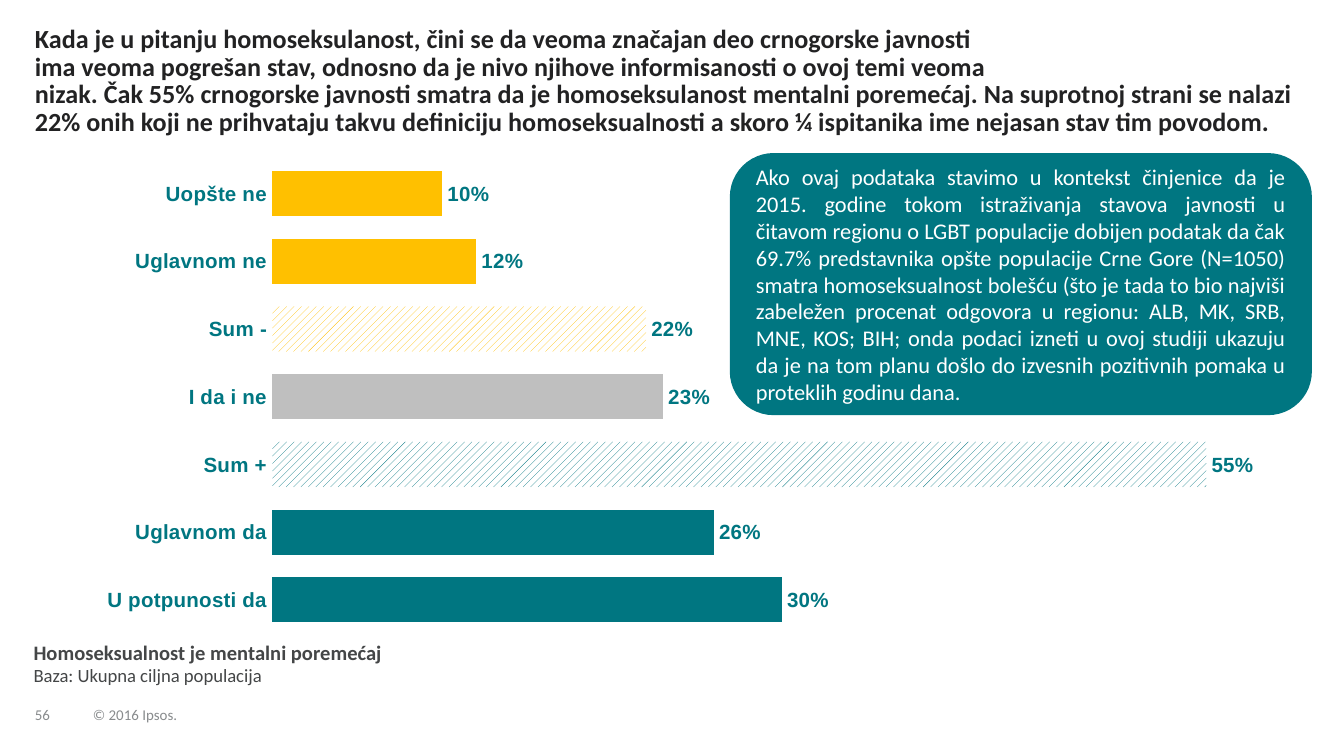
"""Build a survey slide with a bar chart and a commentary callout."""
from dataclasses import dataclass

from pptx import Presentation
from pptx import oxml
from pptx import util as u
from pptx.chart import data as chart_data
from pptx.dml import color
from pptx.enum import chart as charts, dml, shapes, text
from pptx.oxml import ns


@dataclass(frozen=True)
class Theme:
    """Colours, fonts and type sizes of the slide."""
    teal: str = "007681"
    amber: str = "FFC000"
    grey: str = "BFBFBF"
    white: str = "FFFFFF"
    heading: str = "222223"
    caption: str = "444647"
    footer: str = "888B8D"
    body_font: str = "Calibri"
    chart_font: str = "Arial"
    title_size: float = 14
    callout_size: float = 12
    label_size: float = 11
    base_size: float = 10
    footer_size: float = 8


THEME = Theme()
MARGIN = 18.72
CONTENT_WIDTH = 684

TITLE = (
    "Kada je u pitanju homoseksulanost, čini se da veoma značajan deo crnogorske javnosti "
    "ima veoma pogrešan stav, odnosno da je nivo njihove informisanosti o ovoj temi veoma"
)
TITLE_REST = (
    "nizak. Čak 55% crnogorske javnosti smatra da je homoseksulanost mentalni poremećaj. "
    "Na suprotnoj strani se nalazi 22% onih koji ne prihvataju takvu definiciju "
    "homoseksualnosti a skoro ¼ ispitanika ime nejasan stav tim povodom."
)
CALLOUT = (
    "Ako ovaj podataka stavimo u kontekst činjenice da je 2015. godine tokom istraživanja "
    "stavova javnosti u čitavom regionu o LGBT populacije dobijen podatak da čak 69.7% "
    "predstavnika opšte populacije Crne Gore (N=1050) smatra homoseksualnost bolešću "
    "(što je tada to bio najviši zabeležen procenat odgovora u regionu: ALB, MK, SRB, MNE, "
    "KOS; BIH; onda podaci izneti u ovoj studiji ukazuju da je na tom planu došlo do "
    "izvesnih pozitivnih pomaka u proteklih godinu dana."
)
ANSWERS = [
    ("Uopšte ne", 10, THEME.amber, False),
    ("Uglavnom ne", 12, THEME.amber, False),
    ("Sum -", 22, THEME.amber, True),
    ("I da i ne", 23, THEME.grey, False),
    ("Sum +", 55, THEME.teal, True),
    ("Uglavnom da", 26, THEME.teal, False),
    ("U potpunosti da", 30, THEME.teal, False),
]


def rgb(value):
    """Return a colour from its hex string."""
    return color.RGBColor.from_string(value)


def points(box):
    """Convert a box of left, top, width, height to points."""
    return [u.Pt(length) for length in box]


def apply(target, **values):
    """Set attributes from a dict of format values."""
    for name, value in values.items():
        setattr(target, name, value)


def set_font(font, size, ink, bold=False, name=THEME.body_font):
    """Format one font."""
    apply(font, name=name, size=u.Pt(size), bold=bold)
    font.color.rgb = rgb(ink)


def add_text(slide, box, runs, spacing, wrap=True, anchor=text.MSO_ANCHOR.TOP):
    """Place a text box whose runs stand on separate lines."""
    frame = slide.shapes.add_textbox(*points(box)).text_frame
    apply(frame, margin_left=0, margin_top=0, margin_right=0, margin_bottom=0,
          word_wrap=wrap, vertical_anchor=anchor)
    paragraph = frame.paragraphs[0]
    paragraph.line_spacing = spacing
    for index, (words, size, ink, bold) in enumerate(runs):
        if index:
            paragraph.add_line_break()
        run = paragraph.add_run()
        run.text = words
        set_font(run.font, size, ink, bold)


def add_heading(slide, box, words):
    """Place one part of the heading."""
    add_text(slide, box, [(words, THEME.title_size, THEME.heading, True)], 0.9)


def add_caption(slide, box):
    """Place the question and its base below the chart."""
    add_text(slide, box, [
        ("Homoseksualnost je mentalni poremećaj", THEME.label_size, THEME.caption, True),
        ("Baza: Ukupna ciljna populacija", THEME.base_size, THEME.caption, False),
    ], 0.95)


def add_footer(slide, box):
    """Place the page number and the copyright line."""
    left, top, width, height = box
    for words, offset in (("56", 0), ("© 2016 Ipsos.", 31)):
        add_text(slide, (left + offset, top, width - offset, height),
                 [(words, THEME.footer_size, THEME.footer, False)], 0.85,
                 wrap=False, anchor=text.MSO_ANCHOR.BOTTOM)


def set_plot_layout(chart, x, y, width, height):
    """Fix the inner plot area as fractions of the chart."""
    plot_area = chart.plots[0]._element.getparent()
    for layout in plot_area.findall(ns.qn("c:layout")):
        plot_area.remove(layout)
    values = "".join(f'<c:{tag} val="{value}"/>' for tag, value in (
        ("layoutTarget", "inner"), ("xMode", "edge"), ("yMode", "edge"),
        ("x", x), ("y", y), ("w", width), ("h", height)))
    plot_area.insert(0, oxml.parse_xml(
        f'<c:layout {ns.nsdecls("c")}><c:manualLayout>{values}</c:manualLayout></c:layout>'))


def add_answer_chart(slide, box):
    """Place the bar chart of answers."""
    data = chart_data.CategoryChartData(number_format='0"%"')
    data.categories = [answer[0] for answer in ANSWERS]
    data.add_series("Series 1", [answer[1] for answer in ANSWERS])
    chart = slide.shapes.add_chart(
        charts.XL_CHART_TYPE.BAR_CLUSTERED, *points(box), data).chart
    apply(chart, has_legend=False, has_title=False)
    label_format = dict(size=THEME.label_size, ink=THEME.teal, bold=True,
                        name=THEME.chart_font)
    set_font(chart.font, **label_format)
    apply(chart.value_axis, visible=False, has_major_gridlines=False,
          minimum_scale=0, maximum_scale=60)
    axis = chart.category_axis
    apply(axis, reverse_order=True, major_tick_mark=charts.XL_TICK_MARK.NONE)
    axis.format.line.fill.background()
    set_font(axis.tick_labels.font, **label_format)
    plot = chart.plots[0]
    apply(plot, gap_width=50, vary_by_categories=False, has_data_labels=True)
    apply(plot.data_labels, show_value=True, number_format='0"%"',
          number_format_is_linked=False, position=charts.XL_LABEL_POSITION.OUTSIDE_END)
    set_font(plot.data_labels.font, **label_format)
    for index, (_, _, ink, hatched) in enumerate(ANSWERS):
        fill = plot.series[0].points[index].format.fill
        if hatched:
            fill.patterned()
            fill.pattern = dml.MSO_PATTERN.WIDE_UPWARD_DIAGONAL
            fill.back_color.rgb = rgb(THEME.white)
        else:
            fill.solid()
        fill.fore_color.rgb = rgb(ink)
    set_plot_layout(chart, 0.186, 0.024, 0.798, 0.956)


def add_callout(slide, box):
    """Place the rounded commentary panel."""
    shape = slide.shapes.add_shape(shapes.MSO_SHAPE.ROUNDED_RECTANGLE, *points(box))
    shape.shadow.inherit = False
    shape.fill.solid()
    shape.fill.fore_color.rgb = rgb(THEME.teal)
    shape.line.fill.background()
    apply(shape.text_frame, word_wrap=True, vertical_anchor=text.MSO_ANCHOR.MIDDLE)
    paragraph = shape.text_frame.paragraphs[0]
    paragraph.alignment = text.PP_ALIGN.JUSTIFY
    run = paragraph.add_run()
    run.text = CALLOUT
    set_font(run.font, THEME.callout_size, THEME.white)


def main():
    """Build and save the slide."""
    presentation = Presentation()
    apply(presentation, slide_width=u.Pt(720), slide_height=u.Pt(405))
    slide = presentation.slides.add_slide(presentation.slide_layouts[6])
    add_footer(slide, (MARGIN, 374.4, 86, 13))
    add_heading(slide, (MARGIN, 13.7, 516, 30), TITLE)
    add_caption(slide, (18, 344, CONTENT_WIDTH, 34))
    add_answer_chart(slide, (MARGIN, 79.2, CONTENT_WIDTH, 265.7))
    add_heading(slide, (MARGIN, 43.2, CONTENT_WIDTH, 30), TITLE_REST)
    add_callout(slide, (391, 82, 311.8, 140.4))
    presentation.save("out.pptx")


if __name__ == "__main__":
    main()
